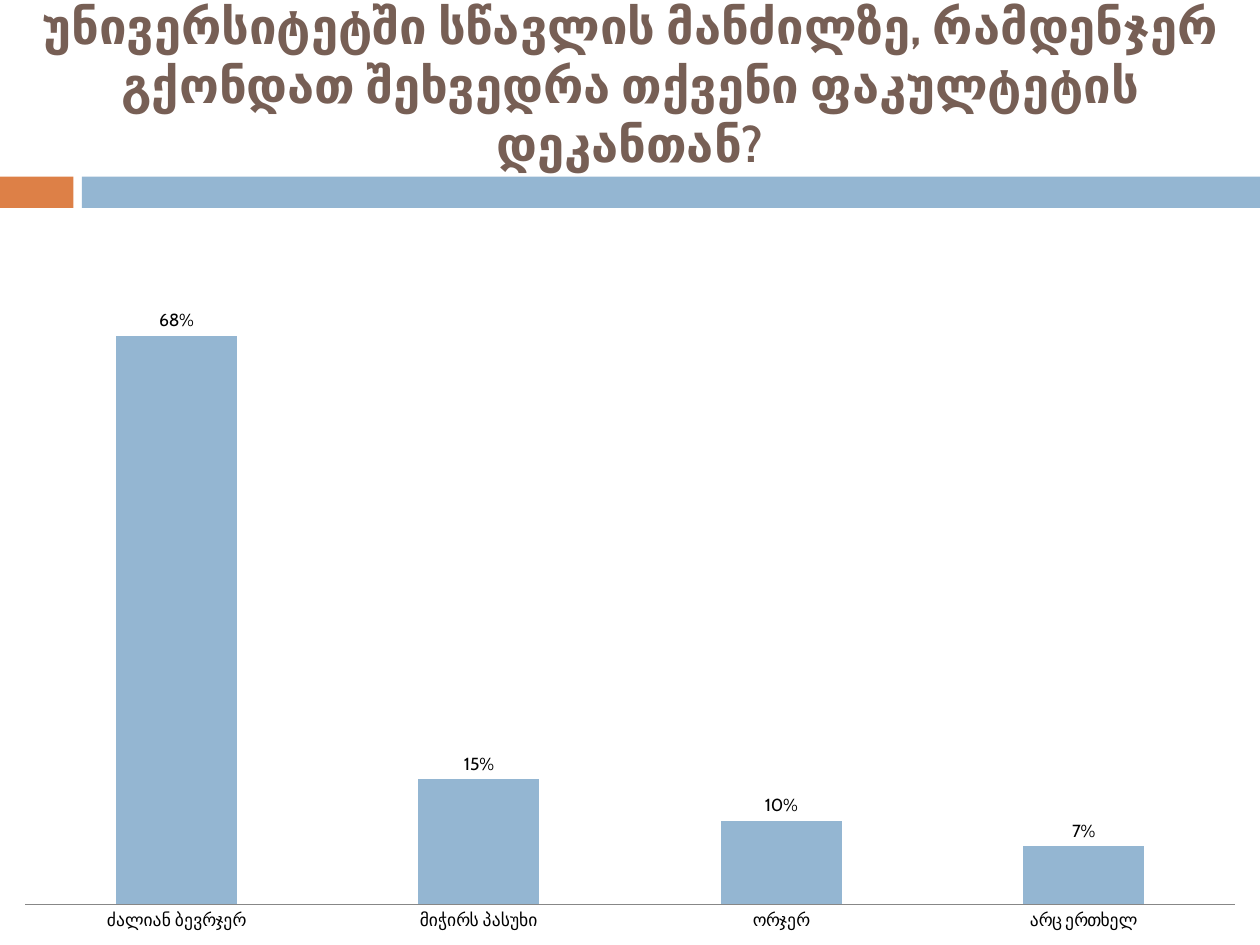
from pptx import Presentation
from pptx.chart.data import CategoryChartData
from pptx.dml.color import RGBColor
from pptx.enum.chart import XL_CHART_TYPE, XL_LABEL_POSITION, XL_TICK_MARK
from pptx.enum.shapes import MSO_SHAPE
from pptx.enum.text import MSO_ANCHOR, PP_ALIGN
from pptx.util import Cm, Pt

COLUMNS = XL_CHART_TYPE.COLUMN_CLUSTERED
OUTSIDE_END = XL_LABEL_POSITION.OUTSIDE_END
NO_TICKS = XL_TICK_MARK.NONE
RECTANGLE = MSO_SHAPE.RECTANGLE
MIDDLE = MSO_ANCHOR.MIDDLE
CENTER = PP_ALIGN.CENTER

WIDTH, HEIGHT = 25.4, 19.05
BLUE, ORANGE, BROWN, BLACK, GRAY = "94B6D2", "DD8047", "775F55", "000000", "878787"

TITLE = ("უნივერსიტეტში სწავლის მანძილზე, რამდენჯერ გქონდათ შეხვედრა "
         "თქვენი ფაკულტეტის დეკანთან?")
ANSWERS = {
    "ძალიან ბევრჯერ": 0.68,
    "მიჭირს პასუხი": 0.15,
    "ორჯერ": 0.10,
    "არც ერთხელ": 0.07,
}


def color(hex_string):
    return RGBColor.from_string(hex_string)


class SlideBuilder:
    font_name = "Cabin"

    def __init__(self, slide):
        self.slide = slide

    def style_font(self, font, size, hex_color, bold=False):
        font.name = self.font_name
        font.size = Pt(size)
        font.bold = bold
        font.color.rgb = color(hex_color)

    def bar(self, left, top, width, height, fill):
        shape = self.slide.shapes.add_shape(
            RECTANGLE, Cm(left), Cm(top), Cm(width), Cm(height))
        shape.shadow.inherit = False
        shape.fill.solid()
        shape.fill.fore_color.rgb = color(fill)
        shape.line.fill.background()

    def title(self, text, left, top, width, height):
        box = self.slide.shapes.add_textbox(
            Cm(left), Cm(top), Cm(width), Cm(height))
        frame = box.text_frame
        frame.word_wrap = True
        frame.vertical_anchor = MIDDLE
        paragraph = frame.paragraphs[0]
        paragraph.alignment = CENTER
        run = paragraph.add_run()
        run.text = text
        self.style_font(run.font, 28, BROWN, bold=True)

    def column_chart(self, values, left, top, width, height):
        data = CategoryChartData(number_format="0%")
        data.categories = list(values)
        data.add_series("Series 1", list(values.values()))
        chart = self.slide.shapes.add_chart(
            COLUMNS, Cm(left), Cm(top), Cm(width), Cm(height), data).chart
        chart.has_title = False
        chart.has_legend = False
        self.style_font(chart.font, 10, BLACK)

        category_axis = chart.category_axis
        category_axis.major_tick_mark = NO_TICKS
        category_axis.format.line.color.rgb = color(GRAY)
        value_axis = chart.value_axis
        value_axis.minimum_scale = 0
        value_axis.maximum_scale = 0.8
        value_axis.has_major_gridlines = False
        value_axis.visible = False

        plot = chart.plots[0]
        plot.vary_by_categories = False
        plot.gap_width = 150
        plot.overlap = -25
        plot.has_data_labels = True
        labels = plot.data_labels
        labels.show_value = True
        labels.number_format = "0%"
        labels.number_format_is_linked = False
        labels.position = OUTSIDE_END
        self.style_font(labels.font, 10, BLACK)
        fill = plot.series[0].format.fill
        fill.solid()
        fill.fore_color.rgb = color(BLUE)


def main():
    presentation = Presentation()
    presentation.slide_width = Cm(WIDTH)
    presentation.slide_height = Cm(HEIGHT)
    builder = SlideBuilder(
        presentation.slides.add_slide(presentation.slide_layouts[6]))

    band_top, band_height, band_left = 3.56, 0.63, 1.65
    builder.bar(0, band_top, 1.48, band_height, ORANGE)
    builder.bar(band_left, band_top, WIDTH - band_left, band_height, BLUE)
    builder.title(TITLE, 0, 0, WIDTH, 3.38)
    chart_top = 4.45
    builder.column_chart(ANSWERS, 0, chart_top, WIDTH, HEIGHT - chart_top)

    presentation.save("out.pptx")


if __name__ == "__main__":
    main()
